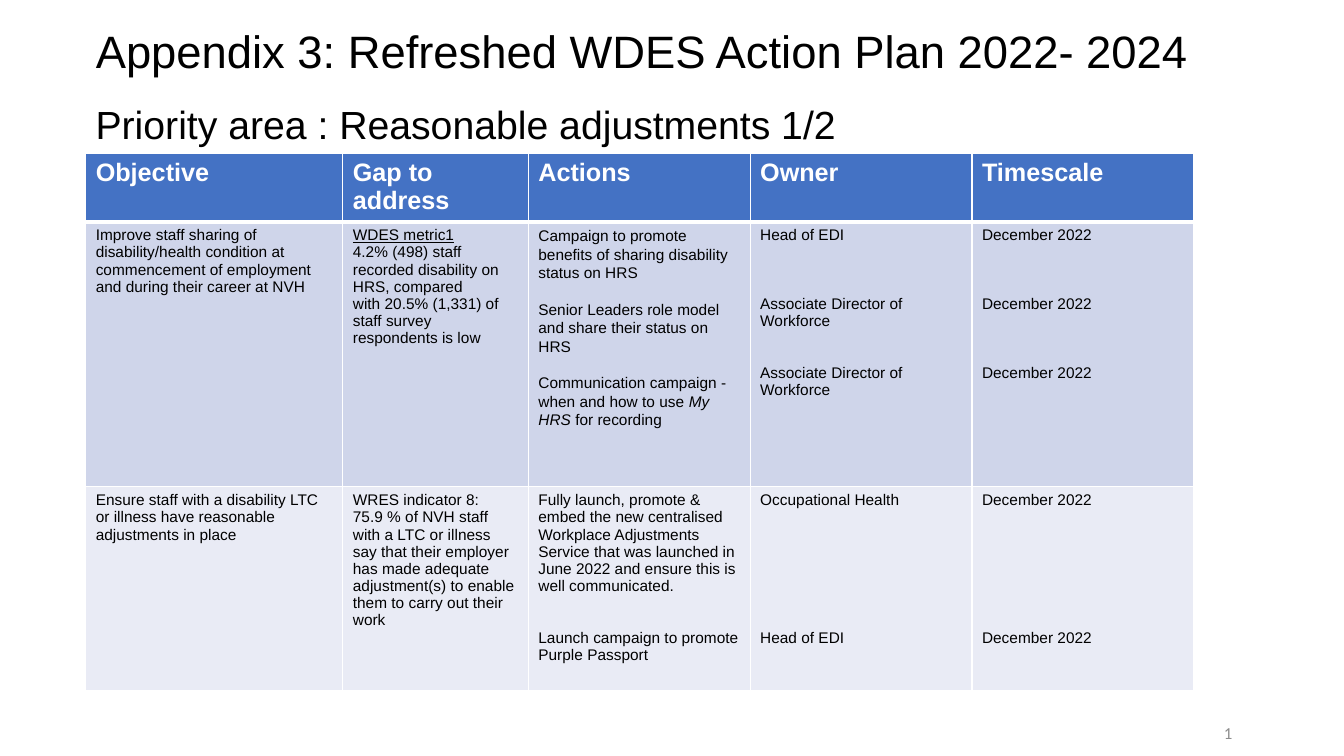
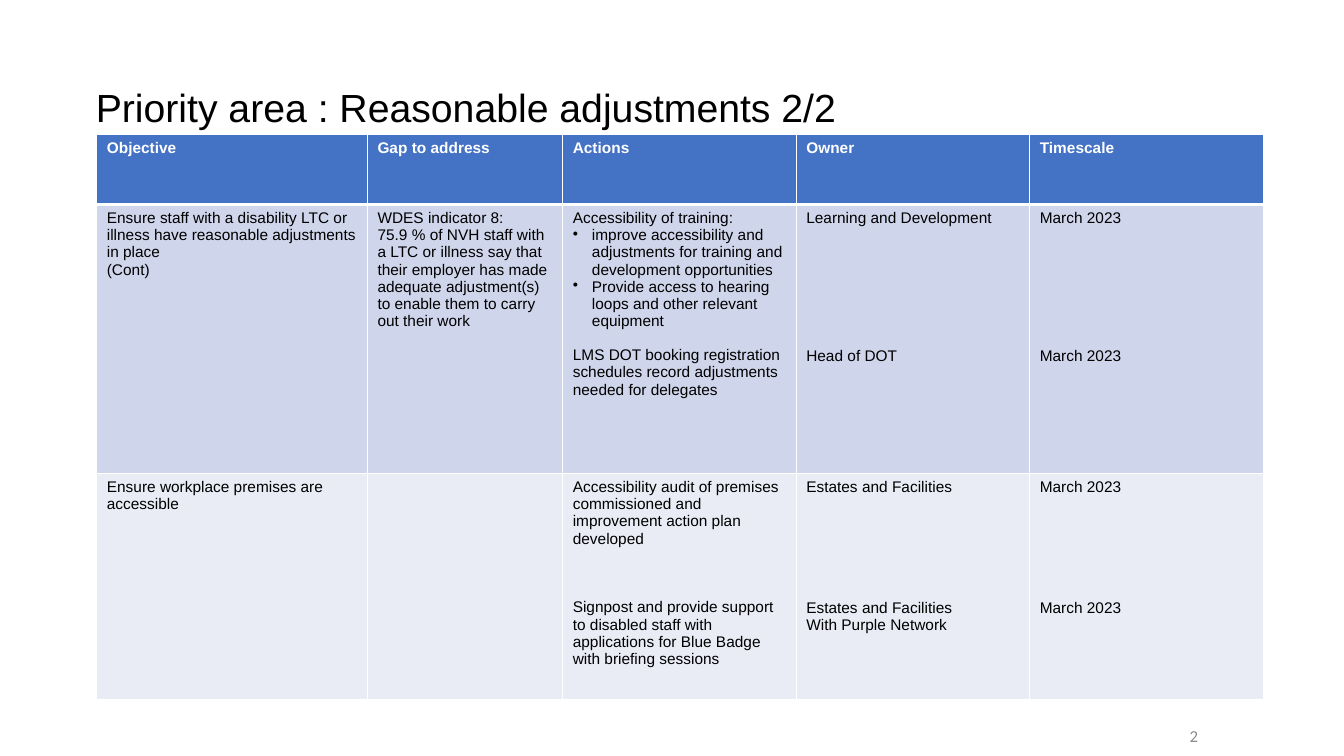
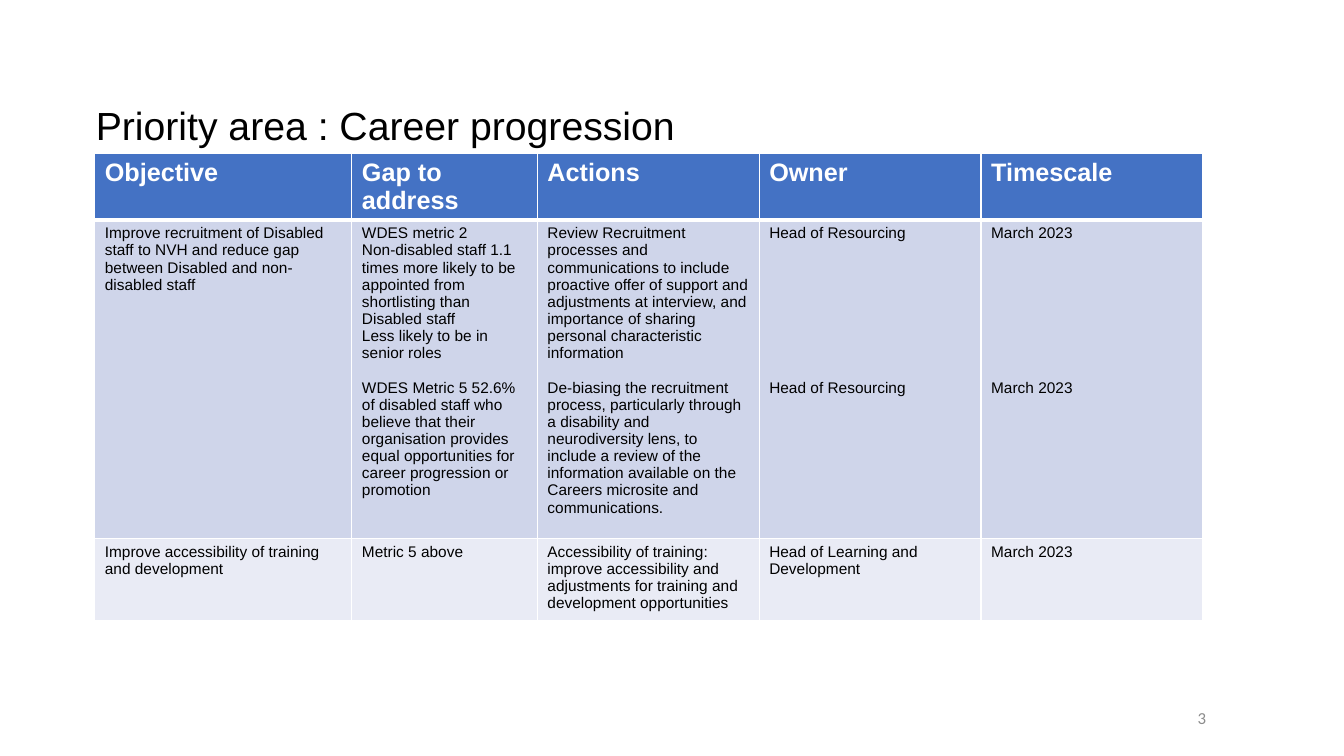
from dataclasses import dataclass
from functools import partial

from lxml.etree import SubElement
from pptx import Presentation
from pptx.dml.color import RGBColor as RGB
from pptx.enum.text import MSO_ANCHOR as ANCHOR, MSO_AUTO_SIZE as AUTO, PP_ALIGN as ALIGN
from pptx.oxml import parse_xml
from pptx.oxml.ns import nsdecls, qn
from pptx.util import Inches, Pt


@dataclass(frozen=True)
class Theme:
    """Colours, fonts and type sizes of the deck."""
    font: str = "Arial"
    number_font: str = "Calibri"
    ink: str = "000000"
    white: str = "FFFFFF"
    grey: str = "8C8C8C"
    header: str = "4472C4"
    bands: tuple = ("CFD5EA", "E9EBF5")
    title: float = 32.4
    heading: float = 28
    header_large: float = 18
    body: float = 11
    number: float = 12
    line: float = 12.3
    thin: float = 1
    thick: float = 3


@dataclass(frozen=True)
class Para:
    """A cell paragraph; in a tuple of texts every second one is italic."""
    text: str | tuple
    gap: int = 0
    bullet: bool = False
    underline: bool = False
    spacing: float = 1


T = Theme()
HEADERS = ("Objective", "Gap to address", "Actions", "Owner", "Timescale")
COLUMNS = (2.55, 1.84, 2.2, 2.2, 2.2)
Airy = partial(Para, spacing=1.07)
Bullet = partial(Para, bullet=True)
LTC_OBJECTIVE = "Ensure staff with a disability LTC or illness have reasonable adjustments in place"
LTC_GAP = ("75.9 % of NVH staff with a LTC or illness say that their employer has made "
           "adequate adjustment(s) to enable them to carry out their work")
TRAINING = "improve accessibility and adjustments for training and development opportunities"

ADJUSTMENTS_1 = [
    [
        ["Improve staff sharing of disability/health condition at commencement of "
         "employment and during their career at NVH"],
        [Para("WDES metric1", underline=True),
         "4.2% (498) staff recorded disability on HRS, compared",
         "with 20.5% (1,331) of staff survey respondents is low"],
        [Airy("Campaign to promote benefits of sharing disability status on HRS"),
         Airy("Senior Leaders role model and share their status on HRS", 1),
         Airy(("Communication campaign - when and how to use ", "My HRS ", "for recording"), 1)],
        ["Head of EDI",
         Para("Associate Director of Workforce", 3),
         Para("Associate Director of Workforce", 2)],
        ["December 2022", Para("December 2022", 3), Para("December 2022", 3)],
    ],
    [
        [LTC_OBJECTIVE],
        ["WRES indicator 8:", LTC_GAP],
        ["Fully launch, promote & embed the new centralised Workplace Adjustments Service "
         "that was launched in June 2022 and ensure this is well communicated.",
         Para("Launch campaign to promote Purple Passport", 2)],
        ["Occupational Health", Para("Head of EDI", 7)],
        ["December 2022", Para("December 2022", 7)],
    ],
]

ADJUSTMENTS_2 = [
    [
        [LTC_OBJECTIVE, "(Cont)"],
        ["WDES indicator 8:", LTC_GAP],
        ["Accessibility of training:",
         Bullet(TRAINING),
         Bullet("Provide access to hearing loops and other relevant equipment"),
         Para("LMS DOT booking registration schedules record adjustments needed for delegates", 1)],
        ["Learning and Development", Para("Head of DOT", 7)],
        ["March 2023", Para("March 2023", 7)],
    ],
    [
        ["Ensure workplace premises are accessible"],
        [],
        ["Accessibility audit of premises commissioned and improvement action plan developed",
         Para("Signpost and provide support to disabled staff with applications for Blue Badge "
              "with briefing sessions", 3)],
        ["Estates and Facilities", Para("Estates and Facilities", 6), "With Purple Network"],
        ["March 2023", Para("March 2023", 6)],
    ],
]

CAREER = [
    [
        ["Improve recruitment of Disabled staff to NVH and reduce gap between Disabled and "
         "non-disabled staff"],
        ["WDES metric 2",
         "Non-disabled staff 1.1 times more likely to be appointed from shortlisting than "
         "Disabled staff",
         "Less likely to be in senior roles",
         Para("WDES Metric 5 52.6% of disabled staff who believe that their organisation provides "
              "equal opportunities for career progression or promotion", 1)],
        ["Review Recruitment processes and communications to include proactive offer of support "
         "and adjustments at interview, and importance of sharing personal characteristic "
         "information",
         Para("De-biasing the recruitment process, particularly through a disability and "
              "neurodiversity lens, to include a review of the information available on the "
              "Careers microsite and communications.", 1)],
        ["Head of Resourcing", Para("Head of Resourcing", 8)],
        ["March 2023", Para("March 2023", 8)],
    ],
    [
        ["Improve accessibility of training and development"],
        ["Metric 5 above"],
        ["Accessibility of training:", TRAINING],
        ["Head of Learning and Development"],
        ["March 2023"],
    ],
]


def set_font(p, size, color, name=T.font, bold=False):
    """Set the font of a whole paragraph."""
    f = p.font
    f.name, f.size, f.bold = name, Pt(size), bold
    f.color.rgb = RGB.from_string(color)


def place(sp, left, top, width, height):
    """Move and size a shape, in inches."""
    sp.left, sp.top, sp.width, sp.height = map(Inches, (left, top, width, height))


def write_line(sp, text, size, anchor=ANCHOR.TOP):
    """Write one left-aligned line into a title or text box."""
    tf = sp.text_frame
    tf.word_wrap, tf.auto_size, tf.vertical_anchor = True, AUTO.NONE, anchor
    p = tf.paragraphs[0]
    p.text, p.alignment = text, ALIGN.LEFT
    set_font(p, size, T.ink)


def add_heading(s, sp, text, top):
    """Put the priority area above the table."""
    sp = sp or s.shapes.add_textbox(0, 0, 0, 0)
    place(sp, 0.85, top, 8.8, 0.57)
    write_line(sp, text, T.heading)


def add_number(s, number, left, top):
    """Add the slide number as a live field."""
    sp = s.shapes.add_textbox(*map(Inches, (left, top, 4.5, 0.4)))
    tf = sp.text_frame
    tf.word_wrap, tf.vertical_anchor = True, ANCHOR.MIDDLE
    p = tf.paragraphs[0]
    p.alignment = ALIGN.CENTER
    p._p.append(parse_xml(
        f'<a:fld {nsdecls("a")} id="{{B6F15528-21DE-4FAA-801E-634DDDAF4B2B}}" type="slidenum">'
        f'<a:rPr lang="en-GB" sz="{T.number * 100}"><a:solidFill><a:srgbClr val="{T.grey}"/>'
        f'</a:solidFill><a:latin typeface="{T.number_font}"/></a:rPr>'
        f'<a:t>{number}</a:t></a:fld>'))


def style_cell(cell, fill, top, bottom):
    """Fill a cell and draw its white borders."""
    tc_pr = cell._tc.get_or_add_tcPr()
    for side, width in (("L", T.thin), ("R", T.thin), ("T", top), ("B", bottom)):
        ln = SubElement(tc_pr, qn(f"a:ln{side}"), w=str(Pt(width)))
        SubElement(SubElement(ln, qn("a:solidFill")), qn("a:srgbClr"), val=T.white)
    cell.fill.solid()
    cell.fill.fore_color.rgb = RGB.from_string(fill)


def add_bullet(p):
    """Give a paragraph a hanging bullet."""
    p_pr = p._p.get_or_add_pPr()
    p_pr.set("marL", str(Inches(0.19)))
    p_pr.set("indent", str(-Inches(0.19)))
    bullet = parse_xml(f'<a:buChar {nsdecls("a")} char="•"/>')
    p_pr.insert_element_before(bullet, "a:tabLst", "a:defRPr", "a:extLst")


def write_cell(cell, paras):
    """Write the paragraphs of a body cell."""
    tf = cell.text_frame
    for i, item in enumerate(paras):
        para = Para(item) if isinstance(item, str) else item
        p = tf.add_paragraph() if i else tf.paragraphs[0]
        texts = (para.text,) if isinstance(para.text, str) else para.text
        for j, text in enumerate(texts):
            r = p.add_run()
            r.text = text
            if j % 2:
                r.font.italic = True
            if para.underline:
                r.font.underline = True
        set_font(p, T.body, T.ink)
        if para.spacing != 1:
            p.line_spacing = para.spacing
        if para.gap:
            p.space_before = Pt(round(para.gap * T.line * para.spacing, 1))
        if para.bullet:
            add_bullet(p)


def add_plan(s, left, top, width, heights, header_size, rows):
    """Add an action plan table with a header row and banded rows."""
    box = map(Inches, (left, top, width, sum(heights)))
    table = s.shapes.add_table(len(heights), len(HEADERS), *box).table
    for col, share in zip(table.columns, COLUMNS):
        col.width = Inches(width * share / sum(COLUMNS))
    for row, height in zip(table.rows, heights):
        row.height = Inches(height)
    for c, text in enumerate(HEADERS):
        cell = table.cell(0, c)
        style_cell(cell, T.header, T.thin, T.thick)
        p = cell.text_frame.paragraphs[0]
        p.text = text
        set_font(p, header_size, T.white, bold=True)
    for i, row in enumerate(rows):
        for c, paras in enumerate(row):
            cell = table.cell(i + 1, c)
            style_cell(cell, T.bands[i % 2], T.thin if i else T.thick, T.thin)
            write_cell(cell, paras)


def main():
    """Build the three slides and save them."""
    prs = Presentation()
    prs.slide_width, prs.slide_height = Inches(13.33), Inches(7.5)
    s1, s2, s3 = (prs.slides.add_slide(prs.slide_layouts[5]) for _ in range(3))

    title = s1.shapes.title
    place(title, 0.85, 0.1, 11.57, 0.79)
    write_line(title, "Appendix 3: Refreshed WDES Action Plan 2022- 2024", T.title, ANCHOR.MIDDLE)
    add_plan(s1, 0.85, 1.52, 10.99, (0.68, 2.63, 2.02), T.header_large, ADJUSTMENTS_1)
    add_heading(s1, None, "Priority area : Reasonable adjustments 1/2", 0.95)
    add_number(s1, 1, 9.93, 7.07)

    add_plan(s2, 0.96, 1.33, 11.57, (0.7, 2.67, 2.24), T.body, ADJUSTMENTS_2)
    add_heading(s2, s2.shapes.title, "Priority area : Reasonable adjustments 2/2", 0.78)
    add_number(s2, 2, 9.59, 7.1)

    add_plan(s3, 0.94, 1.52, 10.99, (0.66, 3.16, 0.82), T.header_large, CAREER)
    add_heading(s3, s3.shapes.title, "Priority area : Career progression", 0.95)
    add_number(s3, 3, 9.67, 6.92)

    prs.save("out.pptx")


if __name__ == "__main__":
    main()
